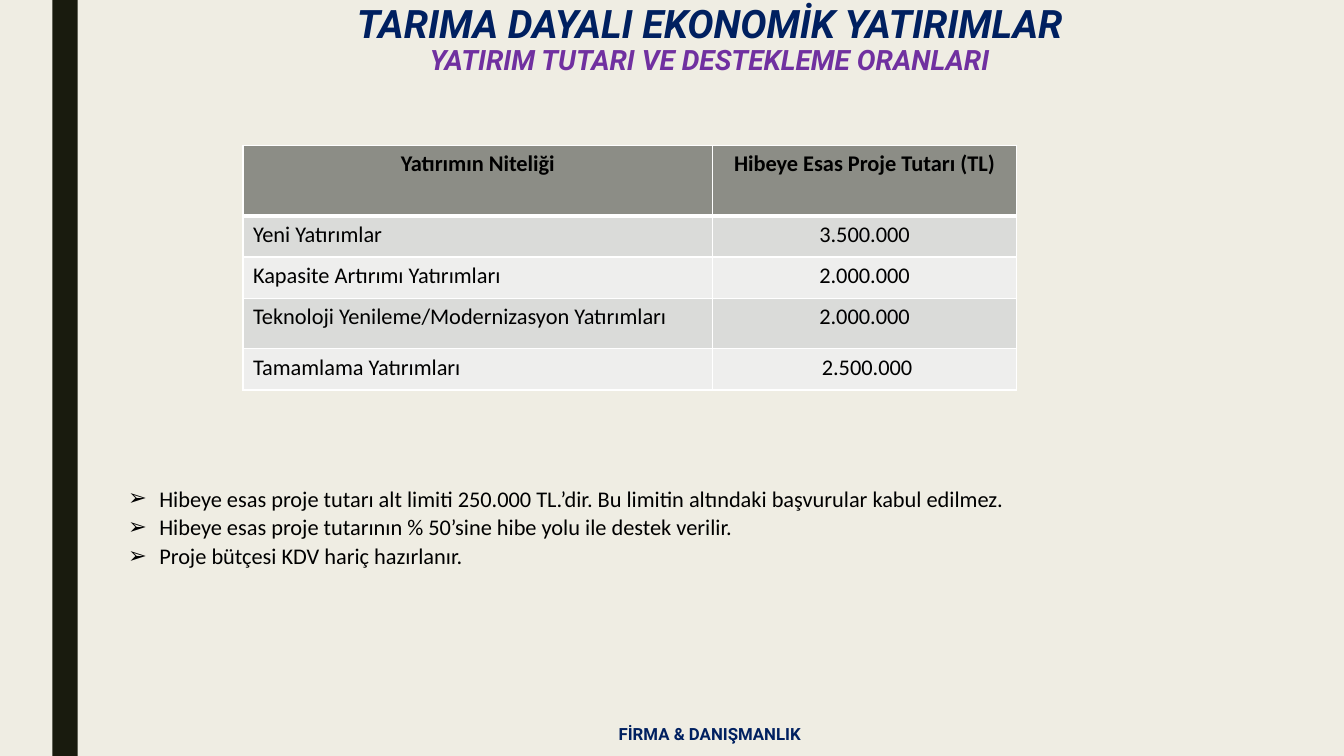
from lxml.etree import SubElement
from pptx import Presentation
from pptx.dml.color import RGBColor
from pptx.enum.shapes import MSO_SHAPE
from pptx.enum.text import MSO_ANCHOR, MSO_AUTO_SIZE, PP_ALIGN
from pptx.oxml.ns import qn
from pptx.util import Inches, Pt

ROWS = [
    ("Yatırımın Niteliği", "Hibeye Esas Proje Tutarı (TL)"),
    ("Yeni Yatırımlar", "3.500.000"),
    ("Kapasite Artırımı Yatırımları", "2.000.000"),
    ("Teknoloji Yenileme/Modernizasyon Yatırımları", "2.000.000"),
    ("Tamamlama Yatırımları", " 2.500.000"),
]
NOTES = [
    "Hibeye esas proje tutarı alt limiti 250.000 TL.’dir. "
    "Bu limitin altındaki başvurular kabul edilmez.",
    "Hibeye esas proje tutarının % 50’sine hibe yolu ile destek verilir.",
    "Proje bütçesi KDV hariç hazırlanır.",
]


def color(code):
    return RGBColor.from_string(code)


class Page:
    head, body = "Roboto", "Calibri"
    navy, plum, black, white = "002060", "7030A0", "000000", "FFFFFF"
    dark, paper, gray = "191B0E", "EFEDE3", "8C8D86"
    bands = ("EEEEED", "DADBD9")

    def __init__(self, deck):
        self.slide = deck.slides.add_slide(deck.slide_layouts[1])
        fill = self.slide.background.fill
        fill.solid()
        fill.fore_color.rgb = color(self.paper)

    def place(self, shape, box, anchor=MSO_ANCHOR.TOP):
        shape.left, shape.top, shape.width, shape.height = map(Inches, box)
        frame = shape.text_frame
        frame.word_wrap = True
        frame.auto_size = MSO_AUTO_SIZE.NONE
        frame.vertical_anchor = anchor
        return frame

    def style(self, para, face, size, tint, align, bold=False, slant=False):
        para.alignment = align
        para.space_before = Pt(0)
        for run in para.runs:
            font = run.font
            font.name, font.size = face, Pt(size)
            font.bold, font.italic = bold, slant
            font.color.rgb = color(tint)

    def bar(self, box):
        shape = self.slide.shapes.add_shape(MSO_SHAPE.RECTANGLE, *map(Inches, box))
        shape.shadow.inherit = False
        shape.fill.solid()
        shape.fill.fore_color.rgb = color(self.dark)
        shape.line.fill.background()

    def title(self, box, lines):
        frame = self.place(self.slide.shapes.title, box)
        frame.text = "\n".join(lines)
        looks = ((28, self.navy), (20, self.plum))
        for para, (size, tint) in zip(frame.paragraphs, looks):
            self.style(para, self.head, size, tint, PP_ALIGN.CENTER, True, True)
            para.line_spacing = 0.89

    def bullets(self, box, lines):
        frame = self.place(self.slide.placeholders[1], box)
        frame.text = "\n".join(lines)
        for para in frame.paragraphs:
            self.style(para, self.body, 16, self.black, PP_ALIGN.JUSTIFY)
            para.line_spacing = 1.07
            props = para._p.get_or_add_pPr()
            props.set("marL", str(Inches(0.31)))
            props.set("indent", str(Inches(-0.31)))
            SubElement(props, qn("a:buChar"), char="➢")

    def label(self, box, text):
        shape = self.slide.shapes.add_textbox(*map(Inches, box))
        frame = self.place(shape, box, MSO_ANCHOR.MIDDLE)
        frame.text = text
        self.style(frame.paragraphs[0], self.head, 12, self.navy, PP_ALIGN.CENTER, True)

    def edges(self, cell, base):
        props = cell._tc.get_or_add_tcPr()
        for side, width in zip("LRTB", (1, 1, 1, base)):
            line = SubElement(props, qn("a:ln" + side), w=str(Pt(width)))
            fill = SubElement(line, qn("a:solidFill"))
            SubElement(fill, qn("a:srgbClr"), val=self.white)

    def table(self, left, top, widths, heights, rows):
        size = (sum(widths), sum(heights))
        grid = self.slide.shapes.add_table(
            len(rows), len(widths), *map(Inches, (left, top, *size))).table
        grid.horz_banding = False
        for col, width in zip(grid.columns, widths):
            col.width = Inches(width)
        for row, height in zip(grid.rows, heights):
            row.height = Inches(height)
        for i, row in enumerate(rows):
            for j, text in enumerate(row):
                cell = grid.cell(i, j)
                self.edges(cell, 1 if i else 3)
                cell.fill.solid()
                cell.fill.fore_color.rgb = color(self.bands[i % 2] if i else self.gray)
                cell.text_frame.text = text
                align = PP_ALIGN.LEFT if i and not j else PP_ALIGN.CENTER
                self.style(cell.text_frame.paragraphs[0], self.body, 16,
                           self.black, align, i == 0)


def main():
    deck = Presentation()
    deck.slide_width, deck.slide_height = Inches(13.33), Inches(7.5)
    page = Page(deck)

    # Side bar and heading
    page.bar((0.52, 0, 0.25, 7.5))
    page.title((0.75, 0, 12.58, 0.86),
               ("TARIMA DAYALI EKONOMİK YATIRIMLAR",
                "YATIRIM TUTARI VE DESTEKLEME ORANLARI"))

    # Grant limits and rules
    page.table(2.41, 1.44, (4.66, 3.01), (0.7, 0.41, 0.41, 0.5, 0.41), ROWS)
    page.bullets((1.17, 4.74, 11.43, 1.25), NOTES)

    # Footer
    page.label((0.75, 7.06, 12.58, 0.44), "FİRMA & DANIŞMANLIK")
    deck.save("out.pptx")


if __name__ == "__main__":
    main()
